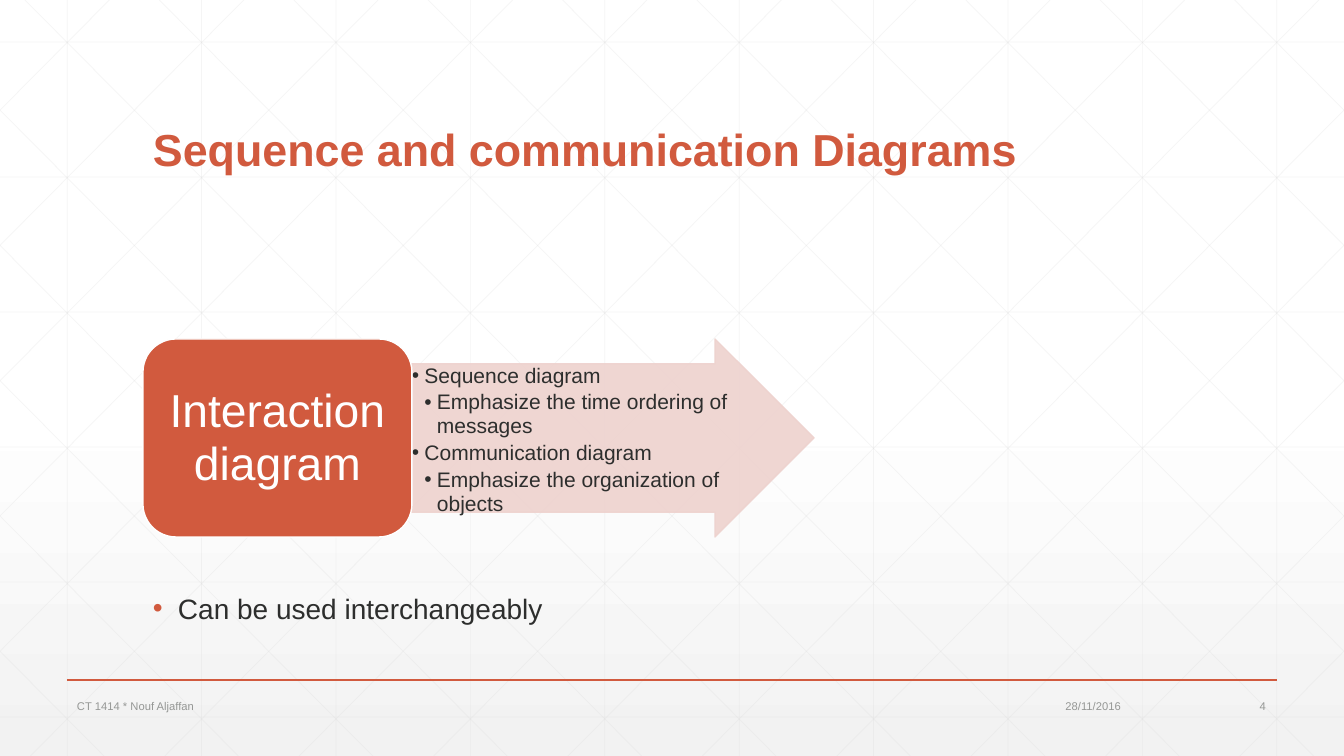
from dataclasses import dataclass

from lxml import etree
from pptx import Presentation
from pptx.dml.color import RGBColor
from pptx.enum.shapes import MSO_CONNECTOR, MSO_SHAPE
from pptx.enum.text import MSO_ANCHOR, MSO_AUTO_SIZE, PP_ALIGN
from pptx.oxml.ns import qn
from pptx.util import Emu, Pt

LINE = MSO_CONNECTOR.STRAIGHT
ARROW, ROUND = MSO_SHAPE.RIGHT_ARROW, MSO_SHAPE.ROUNDED_RECTANGLE
TOP, MID, LOW = MSO_ANCHOR.TOP, MSO_ANCHOR.MIDDLE, MSO_ANCHOR.BOTTOM
LEFT, MIDDLE, RIGHT = PP_ALIGN.LEFT, PP_ALIGN.CENTER, PP_ALIGN.RIGHT
FIXED = MSO_AUTO_SIZE.NONE

WIDE, HIGH = 1344, 756
SCALE = 12192000 / WIDE


@dataclass(frozen=True)
class Theme:
    face: str = "Arial"
    accent: str = "D15A3E"
    pale: str = "EED2CE"
    ink: str = "2D2E2D"
    muted: str = "959795"
    grid: str = "D9D9D9"
    white: str = "FFFFFF"
    base: str = "F2F2F2"
    title: int = 32
    label: int = 33
    body: int = 20
    item: int = 15
    small: int = 8


THEME = Theme()
ITEMS = [
    (1, "Sequence diagram"),
    (2, "Emphasize the time ordering of messages"),
    (1, "Communication diagram"),
    (2, "Emphasize the organization of objects"),
]


def px(num):
    return Emu(round(num * SCALE))


def rgb(code):
    return RGBColor.from_string(code)


def fade(fill, pct):
    """Set the opacity of a solid fill."""
    color = fill._xPr.find(qn("a:solidFill"))[0]
    etree.SubElement(color, qn("a:alpha"), val=str(pct * 1000))


def add_line(slide, start, end, color, width, pct=100):
    ends = [px(n) for n in (*start, *end)]
    line = slide.shapes.add_connector(LINE, *ends)
    line.line.color.rgb = rgb(color)
    line.line.width = Pt(width)
    if pct < 100:
        fade(line.line.fill, pct)
    etree.SubElement(line._element.spPr, qn("a:effectLst"))


def add_form(slide, kind, box, fill, edge, pct=100):
    form = slide.shapes.add_shape(kind, *map(px, box))
    form.shadow.inherit = False
    form.fill.solid()
    form.fill.fore_color.rgb = rgb(fill)
    form.line.color.rgb = rgb(edge)
    form.line.width = Pt(1)
    if pct < 100:
        fade(form.fill, pct)
        fade(form.line.fill, pct)
    return form


def set_frame(shape, anchor, pads=(10, 5)):
    frame = shape.text_frame
    frame.word_wrap = True
    frame.auto_size = FIXED
    frame.vertical_anchor = anchor
    frame.margin_left = frame.margin_right = px(pads[0])
    frame.margin_top = frame.margin_bottom = px(pads[1])
    return frame


def add_box(slide, box, anchor=TOP, pads=(10, 5)):
    return set_frame(slide.shapes.add_textbox(*map(px, box)), anchor, pads)


def set_para(para, text, size, color, align=LEFT, bold=False, space=1.0):
    para.text = text
    para.alignment = align
    para.line_spacing = space
    font = para.font
    font.name, font.size, font.bold = THEME.face, Pt(size), bold
    font.color.rgb = rgb(color)


def set_bullet(para, left, hang, color):
    props = para._p.get_or_add_pPr()
    props.set("marL", str(px(left)))
    props.set("indent", str(-px(hang)))
    tint = etree.SubElement(props, qn("a:buClr"))
    etree.SubElement(tint, qn("a:srgbClr"), val=color)
    etree.SubElement(props, qn("a:buFont"), typeface=THEME.face)
    etree.SubElement(props, qn("a:buChar"), char="•")


def add_ground(slide):
    fill = slide.background.fill
    fill.gradient()
    fill.gradient_angle = 270
    stops = zip(fill.gradient_stops, (0.53, 1), (THEME.white, THEME.base))
    for stop, place, color in stops:
        stop.position = place
        stop.color.rgb = rgb(color)


def add_grid(slide):
    step = WIDE / 10
    ends = [((x, 0), (x, HIGH)) for x in (step * (i + 0.5) for i in range(10))]
    ends += [((0, y), (WIDE, y)) for y in range(42, HIGH, 135)]
    # Diagonals, clipped at the sides, each with its mirror
    run = 751
    slope = HIGH / run
    for i in range(-5, 10):
        x = 25 + step * i
        left, right = max(x, 0), min(x + run, WIDE)
        top, low = (left - x) * slope, (right - x) * slope
        ends.append(((left, top), (right, low)))
        ends.append(((WIDE - left, top), (WIDE - right, low)))
    for start, end in ends:
        add_line(slide, start, end, THEME.grid, 0.5, 25)


def add_title(slide, text):
    title = slide.shapes.title
    title.left, title.top, title.width, title.height = map(
        px, (143, 55, 1058, 126))
    frame = set_frame(title, LOW)
    set_para(frame.paragraphs[0], text, THEME.title, THEME.accent,
             bold=True, space=0.9)
    # Bring the title in front of the grid
    slide.shapes._spTree.append(title._element)


def add_flow(slide):
    add_form(slide, ARROW, (411, 339, 403, 198), THEME.pale, THEME.pale,
             90).adjustments[0] = 0.75
    frame = add_box(slide, (411, 363, 329, 149), pads=(1, 1))
    for i, (level, text) in enumerate(ITEMS):
        para = frame.add_paragraph() if i else frame.paragraphs[0]
        set_bullet(para, 12.5 * level, 12.5, THEME.ink)
        set_para(para, text, THEME.item, THEME.ink, space=0.95)
        para.space_after = Pt(2)
    card = add_form(slide, ROUND, (143, 339, 269, 198), THEME.accent,
                    THEME.white)
    frame = set_frame(card, MID, (14, 7))
    set_para(frame.paragraphs[0], "Interaction diagram", THEME.label,
             THEME.white, MIDDLE, space=0.95)


def add_note(slide, text):
    para = add_box(slide, (143, 586, 1058, 44)).paragraphs[0]
    set_bullet(para, 25, 25, THEME.accent)
    set_para(para, text, THEME.body, THEME.ink)


def add_footer(slide):
    add_line(slide, (67, 680), (1277, 680), THEME.accent, 1)
    for left, width, text, align in (
        (67, 675, "CT 1414 * Nouf Aljaffan", LEFT),
        (1024, 107, "28/11/2016", RIGHT),
        (1175, 101, "4", RIGHT),
    ):
        frame = add_box(slide, (left, 694, width, 24), MID)
        set_para(frame.paragraphs[0], text, THEME.small, THEME.muted, align)


def main():
    deck = Presentation()
    deck.slide_width, deck.slide_height = px(WIDE), px(HIGH)
    slide = deck.slides.add_slide(deck.slide_layouts[5])
    add_ground(slide)
    add_grid(slide)
    add_title(slide, "Sequence and communication Diagrams")
    add_flow(slide)
    add_note(slide, "Can be used interchangeably")
    add_footer(slide)
    deck.save("out.pptx")


if __name__ == "__main__":
    main()
